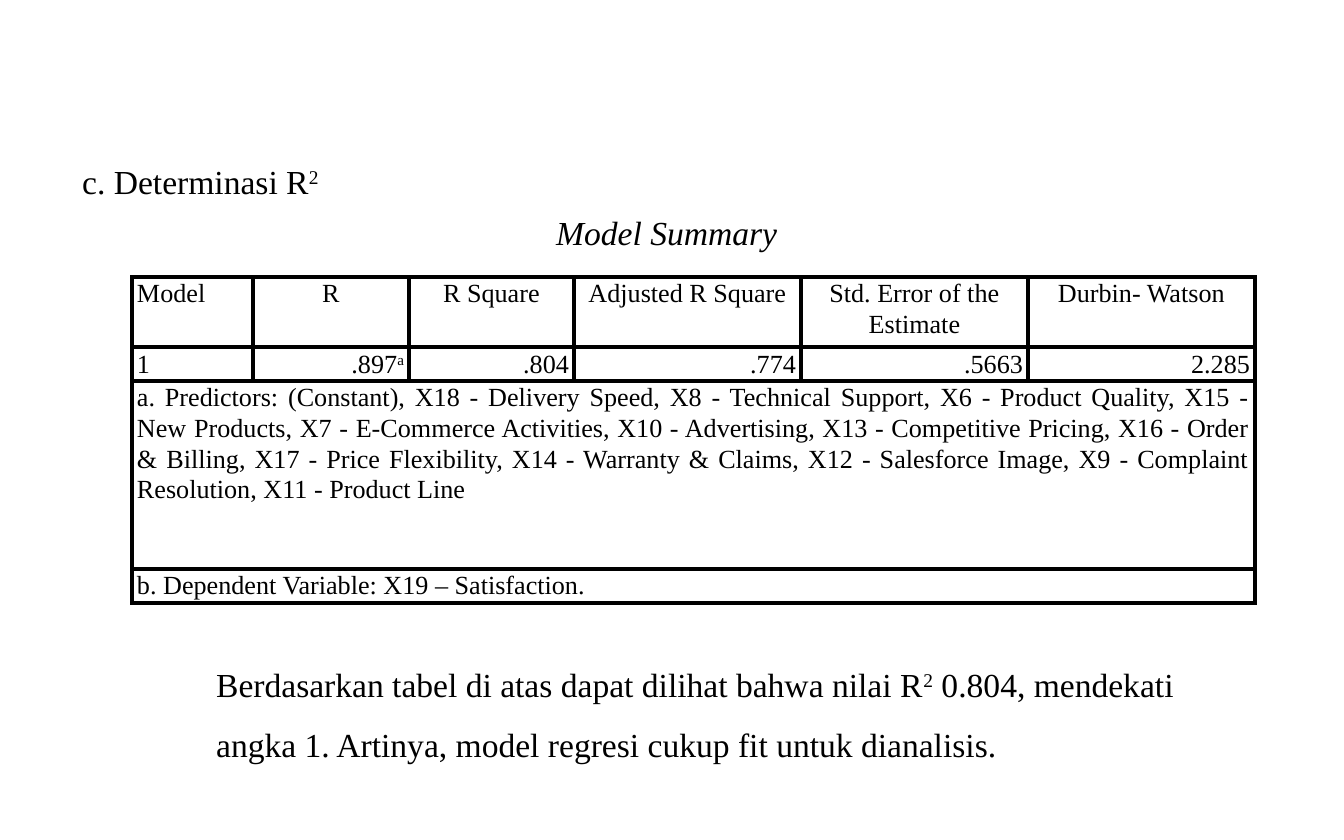
from pptx import Presentation
from pptx.dml.color import RGBColor
from pptx.enum.text import MSO_ANCHOR, PP_ALIGN
from pptx.oxml import parse_xml
from pptx.oxml.ns import nsdecls
from pptx.util import Pt

FONT = "Times New Roman"
BLACK = RGBColor(0x00, 0x00, 0x00)
LEFT, CENTER, RIGHT, JUSTIFY = (
    PP_ALIGN.LEFT, PP_ALIGN.CENTER, PP_ALIGN.RIGHT, PP_ALIGN.JUSTIFY)
SUP = "sup"

# Content: a run is a string, or (string, SUP) for a superscript
HEADING = ["c. Determinasi R", ("2", SUP)]
CAPTION = ["Model Summary"]
CONCLUSION = [
    "Berdasarkan tabel di atas dapat dilihat bahwa nilai R", ("2", SUP),
    " 0.804, mendekati angka 1. Artinya, model regresi cukup fit untuk dianalisis.",
]
HEADERS = ["Model", "R", "R Square", "Adjusted R Square",
           "Std. Error of the Estimate", "Durbin- Watson"]
VALUES = [["1"], [".897", ("a", SUP)], [".804"], [".774"], [".5663"], ["2.285"]]
NOTES = [
    ("a. Predictors: (Constant), X18 - Delivery Speed, X8 - Technical Support, "
     "X6 - Product Quality, X15 - New Products, X7 - E-Commerce Activities, "
     "X10 - Advertising, X13 - Competitive Pricing, X16 - Order & Billing, "
     "X17 - Price Flexibility, X14 - Warranty & Claims, X12 - Salesforce Image, "
     "X9 - Complaint Resolution, X11 - Product Line", JUSTIFY),
    ("b. Dependent Variable: X19 – Satisfaction.", LEFT),
]

# Layout in px
COL_WIDTHS = [121, 156, 165, 227, 227, 227]
ROW_HEIGHTS = [70, 34, 188, 34]
TABLE_LEFT, TABLE_TOP = 132, 277
CELL_INDENT = 5


def px(n):
    return round(n * 914400 / 134.4)


def write(p, runs, size, spacing, after=8, align=LEFT, italic=False):
    p.alignment = align
    p.line_spacing = spacing
    p.space_after = Pt(after)
    for item in runs:
        text, mark = (item, None) if isinstance(item, str) else item
        r = p.add_run()
        r.text = text
        r.font.name = FONT
        r.font.size = Pt(size)
        r.font.color.rgb = BLACK
        if italic:
            r.font.italic = True
        if mark == SUP:
            r.font._element.set("baseline", "30000")


def add_text(s, box, runs, spacing, **style):
    tf = s.shapes.add_textbox(*map(px, box)).text_frame
    tf.word_wrap = True
    write(tf.paragraphs[0], runs, 18, spacing, **style)


def add_borders(cell):
    tcPr = cell._tc.get_or_add_tcPr()
    for i, side in enumerate(("lnL", "lnR", "lnT", "lnB")):
        tcPr.insert(i, parse_xml(
            f'<a:{side} {nsdecls("a")} w="{Pt(2.25)}"><a:solidFill>'
            f'<a:srgbClr val="{BLACK}"/></a:solidFill></a:{side}>'))


def fill_cell(cell, runs, align, anchor=MSO_ANCHOR.TOP):
    cell.margin_left = cell.margin_top = cell.margin_bottom = 0
    cell.margin_right = px(CELL_INDENT)
    cell.vertical_anchor = anchor
    p = cell.text_frame.paragraphs[0]
    p._p.get_or_add_pPr().set("marL", str(px(CELL_INDENT)))
    write(p, runs, 14, 1.07, align=align)


prs = Presentation()
prs.slide_width, prs.slide_height = px(1344), px(840)
s = prs.slides.add_slide(prs.slide_layouts[6])

# Heading
add_text(s, (69, 134, 672, 69), HEADING, 1.5)

# Model summary table
table = s.shapes.add_table(
    len(ROW_HEIGHTS), len(COL_WIDTHS), px(TABLE_LEFT), px(TABLE_TOP),
    px(sum(COL_WIDTHS)), px(sum(ROW_HEIGHTS))).table
table.first_row = table.horz_banding = False
for col, width in zip(table.columns, COL_WIDTHS):
    col.width = px(width)
for row, height in zip(table.rows, ROW_HEIGHTS):
    row.height = px(height)
for cell in table.iter_cells():
    cell.fill.background()
    add_borders(cell)
for c, (header, value) in enumerate(zip(HEADERS, VALUES)):
    fill_cell(table.cell(0, c), [header], CENTER if c else LEFT)
    fill_cell(table.cell(1, c), value, RIGHT if c else LEFT, MSO_ANCHOR.MIDDLE)
for r, (note, align) in enumerate(NOTES, start=2):
    table.cell(r, 0).merge(table.cell(r, len(COL_WIDTHS) - 1))
    fill_cell(table.cell(r, 0), [note], align)

# Table caption
add_text(s, (543, 203, 672, 55), CAPTION, 1.07, after=6, italic=True)

# Conclusion
add_text(s, (203, 637, 1052, 129), CONCLUSION, 1.5)

prs.save("out.pptx")
